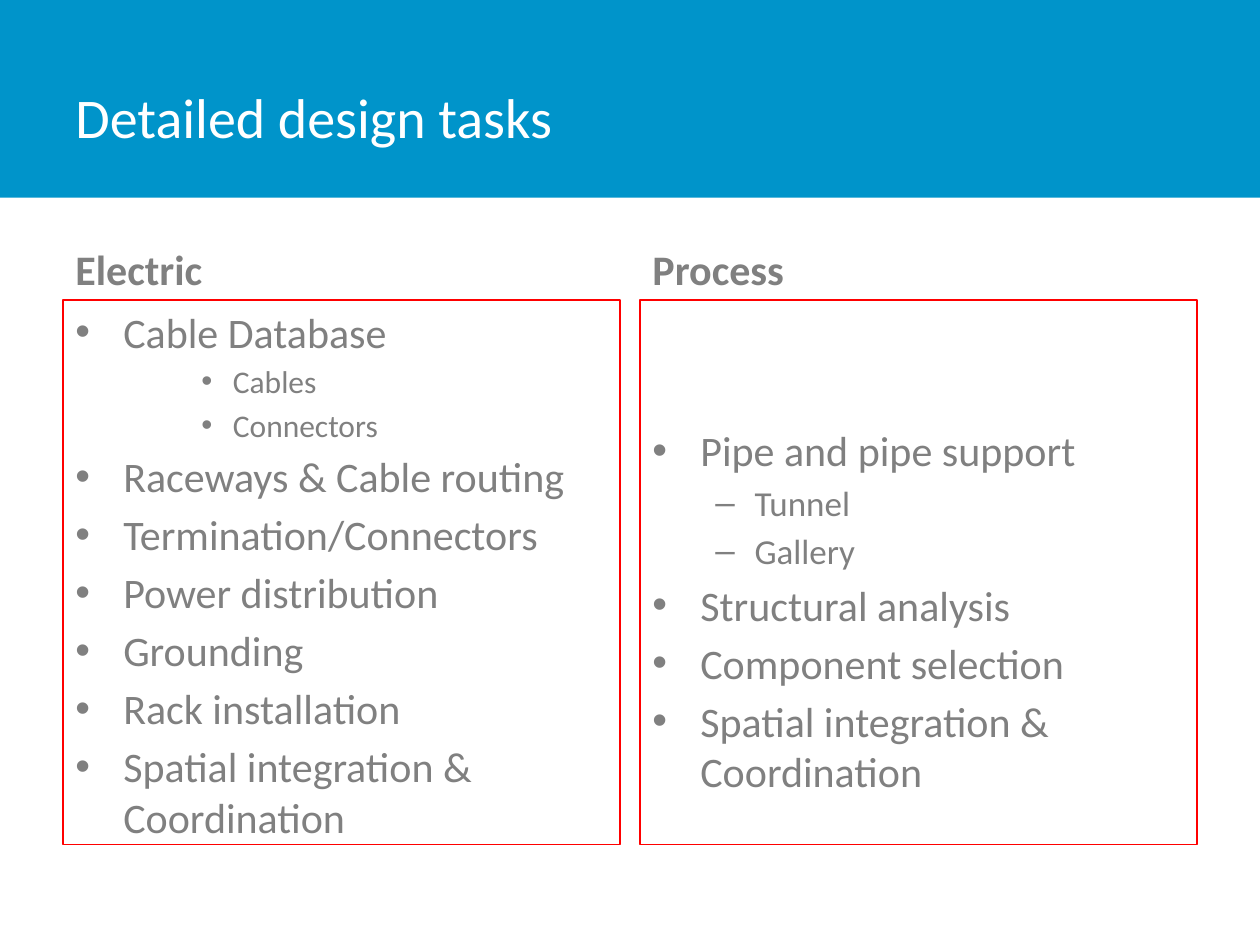
from lxml.etree import SubElement
from pptx import Presentation
from pptx.dml.color import RGBColor
from pptx.enum.shapes import MSO_SHAPE
from pptx.enum.text import MSO_ANCHOR, PP_ALIGN
from pptx.oxml.ns import qn
from pptx.util import Inches, Pt

FONT = "Calibri"
BLUE, WHITE, GREY, RED = "0094CA", "FFFFFF", "808080", "FF0000"

# Level: (text size, left margin, hanging indent, bullet)
LEVELS = [
    (24, 0.38, 0.38, "•"),
    (20, 0.81, 0.31, "–"),
    (18, 1.25, 0.25, "•"),
]

ELECTRIC = [
    (0, "Cable Database"),
    (2, "Cables"),
    (2, "Connectors"),
    (0, "Raceways & Cable routing"),
    (0, "Termination/Connectors"),
    (0, "Power distribution"),
    (0, "Grounding"),
    (0, "Rack installation"),
    (0, "Spatial integration & Coordination"),
]
PROCESS = [
    (0, "Pipe and pipe support"),
    (1, "Tunnel"),
    (1, "Gallery"),
    (0, "Structural analysis"),
    (0, "Component selection"),
    (0, "Spatial integration & Coordination"),
]


def color(value):
    return RGBColor.from_string(value)


def add_run(para, text, size, tint, bold=False):
    run = para.add_run()
    run.text = text
    font = run.font
    font.name, font.size, font.bold = FONT, Pt(size), bold
    font.color.rgb = color(tint)


def add_rect(slide, left, top, width, height):
    rect = slide.shapes.add_shape(
        MSO_SHAPE.RECTANGLE, Inches(left), Inches(top), Inches(width), Inches(height))
    rect.shadow.inherit = False
    return rect


def add_label(slide, box, text, size, tint, anchor, bold=False):
    label = slide.shapes.add_textbox(*map(Inches, box))
    frame = label.text_frame
    frame.word_wrap = True
    frame.vertical_anchor = anchor
    add_run(frame.paragraphs[0], text, size, tint, bold)


def add_bullet(para, margin, hang, mark):
    props = para._p.get_or_add_pPr()
    props.set("marL", str(Inches(margin)))
    props.set("indent", str(-Inches(hang)))
    SubElement(props, qn("a:buFont"), typeface="Arial")
    SubElement(props, qn("a:buChar"), char=mark)


def add_list(slide, box, items, inset):
    """Outlined bullet list whose text starts inset inches below the top."""
    rect = add_rect(slide, *box)
    rect.fill.background()
    rect.line.color.rgb = color(RED)
    rect.line.width = Pt(0.75)
    frame = rect.text_frame
    frame.word_wrap = True
    frame.vertical_anchor = MSO_ANCHOR.TOP
    frame.margin_top = Inches(inset)
    for i, (level, text) in enumerate(items):
        para = frame.add_paragraph() if i else frame.paragraphs[0]
        size, margin, hang, mark = LEVELS[level]
        para.level = level
        para.alignment = PP_ALIGN.LEFT
        para.space_before = Pt(0.18 * size if i else 0)
        add_bullet(para, margin, hang, mark)
        add_run(para, text, size, GREY)


def add_header(slide, width, height, title):
    band = add_rect(slide, 0, 0, width, height)
    band.fill.solid()
    band.fill.fore_color.rgb = color(BLUE)
    band.line.fill.background()
    add_label(slide, (0.5, 0.3, 7.81, 1.25), title, 32, WHITE, MSO_ANCHOR.MIDDLE)


def add_column(slide, box, heading, items, inset):
    left, top, width, height = box
    head = 0.7
    add_label(slide, (left, top, width, head), heading, 24, GREY,
              MSO_ANCHOR.BOTTOM, bold=True)
    add_list(slide, (left, top + head, width, height - head), items, inset)


def main():
    deck = Presentation()
    deck.slide_width, deck.slide_height = Inches(10), Inches(7.5)
    slide = deck.slides.add_slide(deck.slide_layouts[6])
    add_header(slide, 10, 1.57, "Detailed design tasks")
    columns = [("Electric", ELECTRIC, 0.05), ("Process", PROCESS, 0.99)]
    for i, (heading, items, inset) in enumerate(columns):
        add_column(slide, (0.5 + i * 4.58, 1.68, 4.42, 5.02), heading, items, inset)
    deck.save("out.pptx")


if __name__ == "__main__":
    main()
